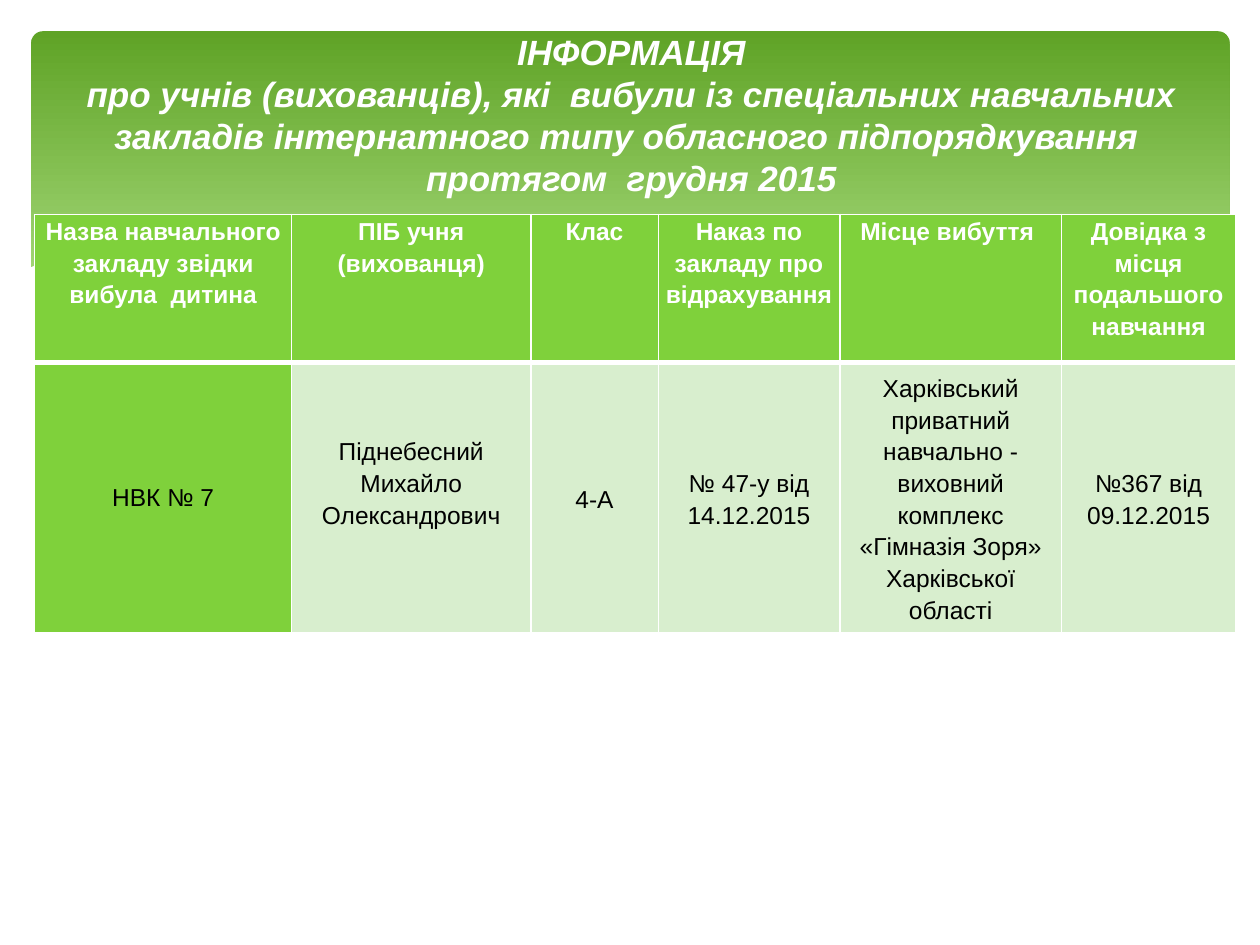
from lxml import etree
from pptx import Presentation
from pptx.dml.color import RGBColor
from pptx.enum import shapes, text
from pptx.oxml import ns
from pptx.util import Cm, Pt

COLORS = {
    "white": "FFFFFF",
    "black": "000000",
    "panel_top": "5FA326",
    "panel_bottom": "B2E389",
    "green": "7FD13B",
    "pale": "D8EECE",
}


def style_runs(paragraph, size, color, bold, italic=False):
    paragraph.alignment = text.PP_ALIGN.CENTER
    for run in paragraph.runs:
        run.font.name = "Arial"
        run.font.size = Pt(size)
        run.font.bold = bold
        run.font.italic = italic
        run.font.color.rgb = RGBColor.from_string(COLORS[color])


def set_borders(cell, widths):
    properties = cell._tc.get_or_add_tcPr()
    for index, (side, width) in enumerate(zip("LRTB", widths)):
        border = etree.Element(ns.qn(f"a:ln{side}"), w=str(Pt(width)))
        fill = etree.SubElement(border, ns.qn("a:solidFill"))
        etree.SubElement(fill, ns.qn("a:srgbClr"), val=COLORS["white"])
        properties.insert(index, border)


prs = Presentation()
prs.slide_width, prs.slide_height = Cm(25.4), Cm(19.05)
slide = prs.slides.add_slide(prs.slide_layouts[6])

panel = slide.shapes.add_shape(
    shapes.MSO_SHAPE.ROUNDED_RECTANGLE, Cm(0.63), Cm(0.63), Cm(24.16), Cm(6.86))
panel.adjustments[0] = 0.034
panel.shadow.inherit = False
panel.line.fill.background()
panel.fill.gradient()
panel.fill.gradient_angle = 270
for stop, position, color in zip(
        panel.fill.gradient_stops, (0, 0.9), ("panel_top", "panel_bottom")):
    stop.position = position
    stop.color.rgb = RGBColor.from_string(COLORS[color])

wave_points = [
    (0.58, 5.41), (1.02, 5.21), (1.5, 5.05), (2.16, 4.9), (3.02, 4.75),
    (4.09, 4.67), (5.36, 4.67), (6.88, 4.78), (8.64, 5), (10.62, 5.41),
    (12.78, 5.92), (14.71, 6.35), (16.46, 6.65), (17.98, 6.86),
    (19.35, 6.99), (20.55, 7.04), (21.59, 6.99), (22.53, 6.88),
    (23.37, 6.73), (24.13, 6.5), (24.82, 6.25), (24.82, 8.36), (0.58, 8.36),
]
wave_builder = slide.shapes.build_freeform(Cm(0.58), Cm(5.41), scale=1.0)
wave_builder.add_line_segments([(Cm(x), Cm(y)) for x, y in wave_points[1:]])
wave = wave_builder.convert_to_shape()
wave.shadow.inherit = False
wave.fill.solid()
wave.fill.fore_color.rgb = RGBColor.from_string(COLORS["white"])
wave.line.fill.background()

title = slide.shapes.add_textbox(Cm(1.3), Cm(0.53), Cm(22.86), Cm(4.39))
title.text_frame.word_wrap = True
title.text_frame.vertical_anchor = text.MSO_ANCHOR.TOP
title.text_frame.margin_top = Cm(0.08)
heading = title.text_frame.paragraphs[0]
heading.text = (
    "ІНФОРМАЦІЯ\vпро учнів (вихованців), які  вибули із спеціальних навчальних "
    "закладів інтернатного типу обласного підпорядкування \v"
    "протягом  грудня 2015")
style_runs(heading, 20, "white", True, True)

records = [
    ["Назва навчального закладу звідки вибула  дитина", "ПІБ учня (вихованця)",
     "Клас", "Наказ по закладу про відрахування", "Місце вибуття ",
     "Довідка з місця подальшого навчання"],
    ["НВК № 7", "Піднебесний Михайло Олександрович", "4-А",
     "№ 47-у від 14.12.2015",
     "Харківський приватний навчально - виховний комплекс "
     "«Гімназія Зоря» Харківської області",
     "№367 від 09.12.2015"],
]
column_widths = [5.18, 4.82, 2.57, 3.66, 4.47, 3.51]
row_heights = [2.99, 5.08]
pupils = slide.shapes.add_table(
    2, 6, Cm(0.7), Cm(4.32), Cm(sum(column_widths)), Cm(sum(row_heights))).table
pupils.horz_banding = False
for column, width in zip(pupils.columns, column_widths):
    column.width = Cm(width)

for r, record in enumerate(records):
    pupils.rows[r].height = Cm(row_heights[r])
    header = r == 0
    for c, wording in enumerate(record):
        cell = pupils.cell(r, c)
        school = not header and c == 0
        cell.text_frame.text = wording
        paragraph = cell.text_frame.paragraphs[0]
        paragraph.line_spacing = 1.0 if school else 1.15
        style_runs(paragraph, 14, "white" if header else "black", header)
        cell.vertical_anchor = text.MSO_ANCHOR.TOP if header else text.MSO_ANCHOR.MIDDLE
        cell.margin_left = cell.margin_right = Cm(0.15 if header else 0.03 if school else 0.18)
        cell.margin_top = cell.margin_bottom = 0
        cell.fill.solid()
        cell.fill.fore_color.rgb = RGBColor.from_string(
            COLORS["green" if header or school else "pale"])
        set_borders(cell, (1, 1, 1, 3) if header else (1, 1, 3, 1))
pupils.cell(1, 1).margin_bottom = Cm(0.64)

prs.save("out.pptx")
